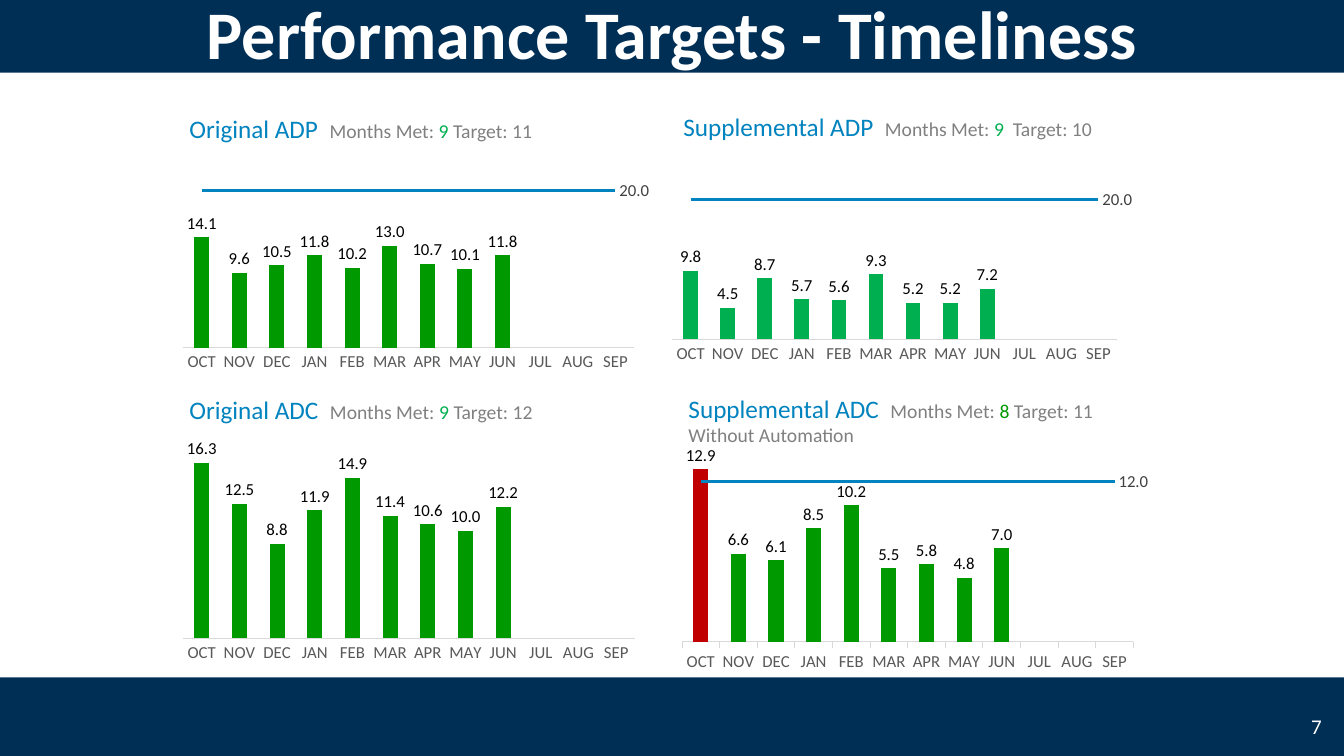
from copy import deepcopy

from pptx import Presentation, util as u
from pptx.chart.data import CategoryChartData
from pptx.dml.color import RGBColor
from pptx.enum import chart as ch, shapes, text
from pptx.oxml import parse_xml
from pptx.oxml.ns import nsdecls, qn

COLORS = {"navy": "002F56", "blue": "0083BE", "gray": "808080", "label": "595959",
          "rule": "D9D9D9", "leaf": "009900", "green": "00B050", "red": "C00000",
          "white": "FFFFFF", "black": "000000", "dark": "404040"}
FONT = "Calibri"
FORMAT = "#,##0.0"
MONTHS = "OCT NOV DEC JAN FEB MAR APR MAY JUN JUL AUG SEP".split()

PANELS = [
    dict(at=(1.72, 1.46), plot=(0.02, 0.02, 0.95, 0.85), top=25, goal=20, color="leaf",
         vals=[14.1, 9.6, 10.5, 11.8, 10.2, 13, 10.7, 10.1, 11.8],
         head=(1.78, 1.07, 4.44, 0.82), name="Original ADP  ",
         notes=[("Months Met:", "gray"), (" 9 ", "green"), ("Target: 11", "gray")]),
    dict(at=(6.6, 1.63), plot=(0.014, 0, 0.935, 0.759), top=25, goal=20, color="green",
         vals=[9.8, 4.5, 8.7, 5.7, 5.6, 9.3, 5.2, 5.2, 7.2],
         head=(6.68, 1.05, 4.93, 0.82), name="Supplemental ADP  ",
         notes=[("Months Met:", "gray"), (" 9  ", "green"), ("Target: 10", "gray")]),
    dict(at=(1.72, 4.32), plot=(0.02, 0.04, 0.95, 0.84), top=18, goal=24, color="leaf",
         vals=[16.3, 12.5, 8.8, 11.9, 14.9, 11.4, 10.6, 10, 12.2], right=24,
         head=(1.78, 3.86, 4.44, 0.4), name="Original ADC  ",
         notes=[("Months Met: ", "gray"), ("9", "green"), (" Target: 12", "gray")]),
    dict(at=(6.67, 4.42), plot=(0.02, 0.04, 0.95, 0.81), top=14, goal=12, color="leaf",
         vals=[12.9, 6.6, 6.1, 8.5, 10.2, 5.5, 5.8, 4.8, 7], ticks=True,
         head=(6.73, 3.85, 4.88, 0.64), name="Supplemental ADC  ",
         notes=[("Months Met:", "gray"), (" 8 ", "leaf"),
                ("Target: 11 Without Automation", "gray")]),
]


def rgb(name):
    """Return the named colour."""
    return RGBColor.from_string(COLORS[name])


def style(font, size, color, bold=False):
    """Format a font."""
    font.name, font.size, font.bold = FONT, u.Pt(size), bold
    font.color.rgb = rgb(color)


def place(shape, *box):
    """Set left, top, width and height in inches."""
    shape.left, shape.top, shape.width, shape.height = map(u.Inches, box)


def add_band(slide, top):
    """Draw a full-width navy band."""
    band = slide.shapes.add_shape(shapes.MSO_SHAPE.RECTANGLE, u.Inches(0), u.Inches(top),
                                  u.Inches(13.33), u.Inches(0.8))
    band.shadow.inherit = False
    band.fill.solid()
    band.fill.fore_color.rgb = rgb("navy")
    band.line.fill.background()


def set_line(shape, words, size, align, bold=False):
    """Fill a shape with one white, vertically centred line."""
    frame = shape.text_frame
    frame.text = words
    frame.word_wrap = True
    frame.auto_size = text.MSO_AUTO_SIZE.NONE
    frame.vertical_anchor = text.MSO_ANCHOR.MIDDLE
    frame.margin_left = frame.margin_right = u.Inches(0.12)
    frame.margin_top = frame.margin_bottom = u.Inches(0.06)
    para = frame.paragraphs[0]
    para.alignment = align
    style(para.runs[0].font, size, "white", bold)


def add_head(slide, panel):
    """Write a panel heading with its months met and target."""
    frame = slide.shapes.add_textbox(*map(u.Inches, panel["head"])).text_frame
    frame.word_wrap = True
    parts = [(panel["name"], "blue", 18)] + [(*note, 14) for note in panel["notes"]]
    for words, color, size in parts:
        run = frame.paragraphs[0].add_run()
        run.text = words
        style(run.font, size, color)


def split_line(chart, right):
    """Turn the second series into a line, on a hidden right axis if asked."""
    bars = chart.plots[0]._element
    ser = bars.findall(qn("c:ser"))[1]
    flag = ser.find(qn("c:invertIfNegative"))
    if flag is not None:
        ser.remove(flag)
    line = parse_xml(f'<c:lineChart {nsdecls("c")}><c:grouping val="standard"/>'
                     '<c:varyColors val="0"/><c:marker val="1"/></c:lineChart>')
    line.insert(2, ser)
    ids = [axis.get("val") for axis in bars.findall(qn("c:axId"))]
    swap = dict(zip(ids, ("5001", "5002") if right else ids))
    for key in ids:
        axis = parse_xml(f'<c:axId {nsdecls("c")} val="{swap[key]}"/>')
        line.append(axis)
    bars.addnext(line)
    if right:
        area = bars.getparent()
        last = area.findall(qn("c:valAx"))[-1]
        for tag in ("c:valAx", "c:catAx"):
            axis = deepcopy(area.find(qn(tag)))
            for part in ("c:axId", "c:crossAx"):
                node = axis.find(qn(part))
                node.set("val", swap[node.get("val")])
            axis.find(qn("c:delete")).set("val", "1")
            if tag == "c:valAx":
                axis.find(qn("c:scaling")).find(qn("c:max")).set("val", str(right))
                axis.find(qn("c:axPos")).set("val", "r")
                axis.find(qn("c:crosses")).set("val", "max")
            last.addnext(axis)


def set_plot(chart, box):
    """Fix the inner plot area as fractions of the chart."""
    area = chart.plots[0]._element.getparent()
    for old in area.findall(qn("c:layout")):
        area.remove(old)
    sizes = "".join(f'<c:{key} val="{val}"/>' for key, val in zip("xywh", box))
    area.insert(0, parse_xml(
        f'<c:layout {nsdecls("c")}><c:manualLayout><c:layoutTarget val="inner"/>'
        f'<c:xMode val="edge"/><c:yMode val="edge"/>{sizes}</c:manualLayout></c:layout>'))


def set_axes(chart, panel):
    """Format the month axis and hide the value axis."""
    months, scale = chart.category_axis, chart.value_axis
    marks = ch.XL_TICK_MARK
    months.major_tick_mark = marks.OUTSIDE if panel.get("ticks") else marks.NONE
    months.minor_tick_mark = marks.NONE
    months.has_major_gridlines = False
    months.format.line.color.rgb = rgb("rule")
    months.format.line.width = u.Pt(0.75)
    style(months.tick_labels.font, 12, "label")
    scale.minimum_scale, scale.maximum_scale = 0, panel["top"]
    scale.has_major_gridlines = False
    scale.visible = False


def add_bars(slide, panel):
    """Add monthly columns with a target line."""
    data = CategoryChartData(number_format=FORMAT)
    data.categories = MONTHS
    data.add_series("Series 1", panel["vals"] + [None] * (12 - len(panel["vals"])))
    data.add_series("Series 2", [panel["goal"]] * 12)
    box = map(u.Inches, (*panel["at"], 4.72, 2.29))
    chart = slide.shapes.add_chart(ch.XL_CHART_TYPE.COLUMN_CLUSTERED, *box, data).chart
    chart.has_legend = chart.has_title = False
    style(chart.font, 10, "black")
    set_axes(chart, panel)
    split_line(chart, panel.get("right"))
    set_plot(chart, panel["plot"])

    plot = chart.plots[0]
    plot.gap_width, plot.vary_by_categories = 150, False
    bars, goal = plot.series[0], chart.plots[1].series[0]
    bars.format.fill.solid()
    bars.format.fill.fore_color.rgb = rgb(panel["color"])
    for spot, val in enumerate(panel["vals"]):
        if val > panel["goal"]:
            fill = bars.points[spot].format.fill
            fill.solid()
            fill.fore_color.rgb = rgb("red")
    tags = bars.data_labels
    tags.show_value = True
    tags.number_format, tags.number_format_is_linked = FORMAT, False
    tags.position = ch.XL_LABEL_POSITION.OUTSIDE_END
    style(tags.font, 12, "black")

    goal.smooth = False
    goal.marker.style = ch.XL_MARKER_STYLE.NONE
    goal.format.line.color.rgb = rgb("blue")
    goal.format.line.width = u.Pt(2.25)
    goal.data_labels.show_value = False
    tag = goal.points[11].data_label
    style(tag.font, 12, "dark")
    tag.position = ch.XL_LABEL_POSITION.RIGHT


def main():
    """Build the timeliness slide."""
    deck = Presentation()
    deck.slide_width, deck.slide_height = u.Inches(13.33), u.Inches(7.5)
    slide = deck.slides.add_slide(deck.slide_layouts[5])
    for top in (6.72, -0.08):
        add_band(slide, top)
    title = slide.shapes.title
    slide.shapes._spTree.append(title._element)
    place(title, 0, -0.08, 13.33, 0.8)
    set_line(title, "Performance Targets - Timeliness", 48.6, text.PP_ALIGN.CENTER, True)
    number = slide.shapes.add_textbox(*map(u.Inches, (12.67, 7, 0.56, 0.4)))
    set_line(number, "7", 15, text.PP_ALIGN.RIGHT)
    for panel in PANELS:
        add_bars(slide, panel)
        add_head(slide, panel)
    deck.save("out.pptx")


if __name__ == "__main__":
    main()
